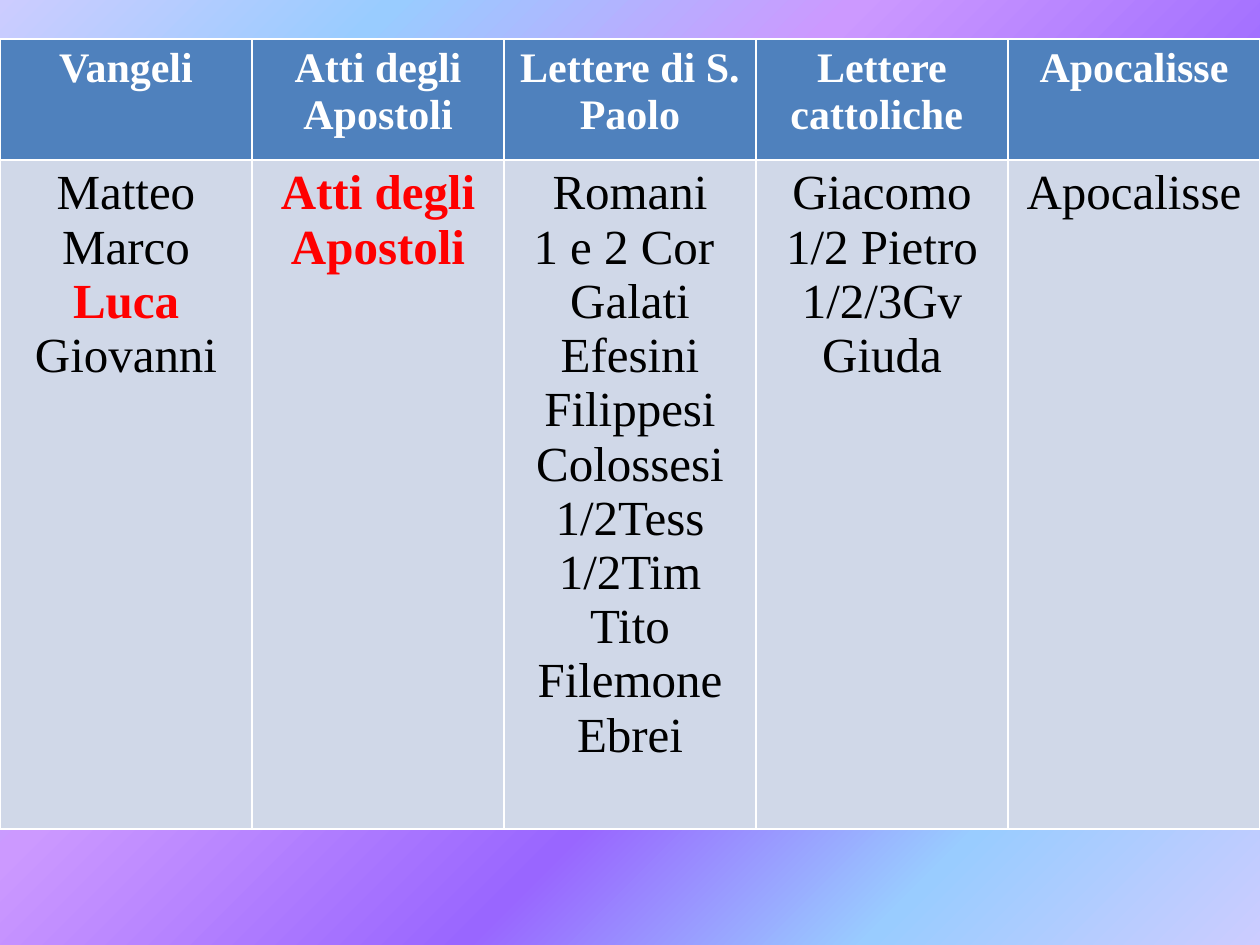
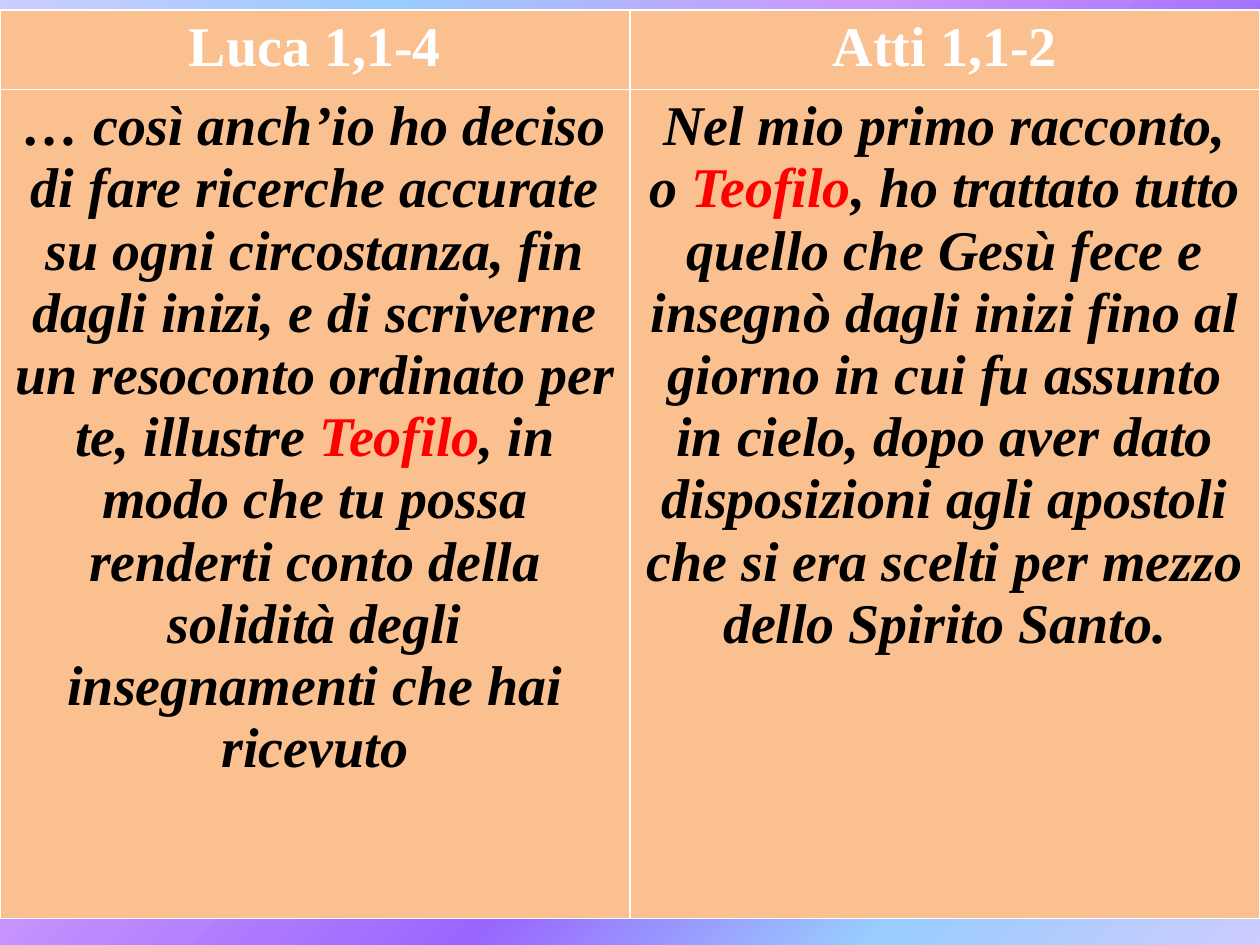
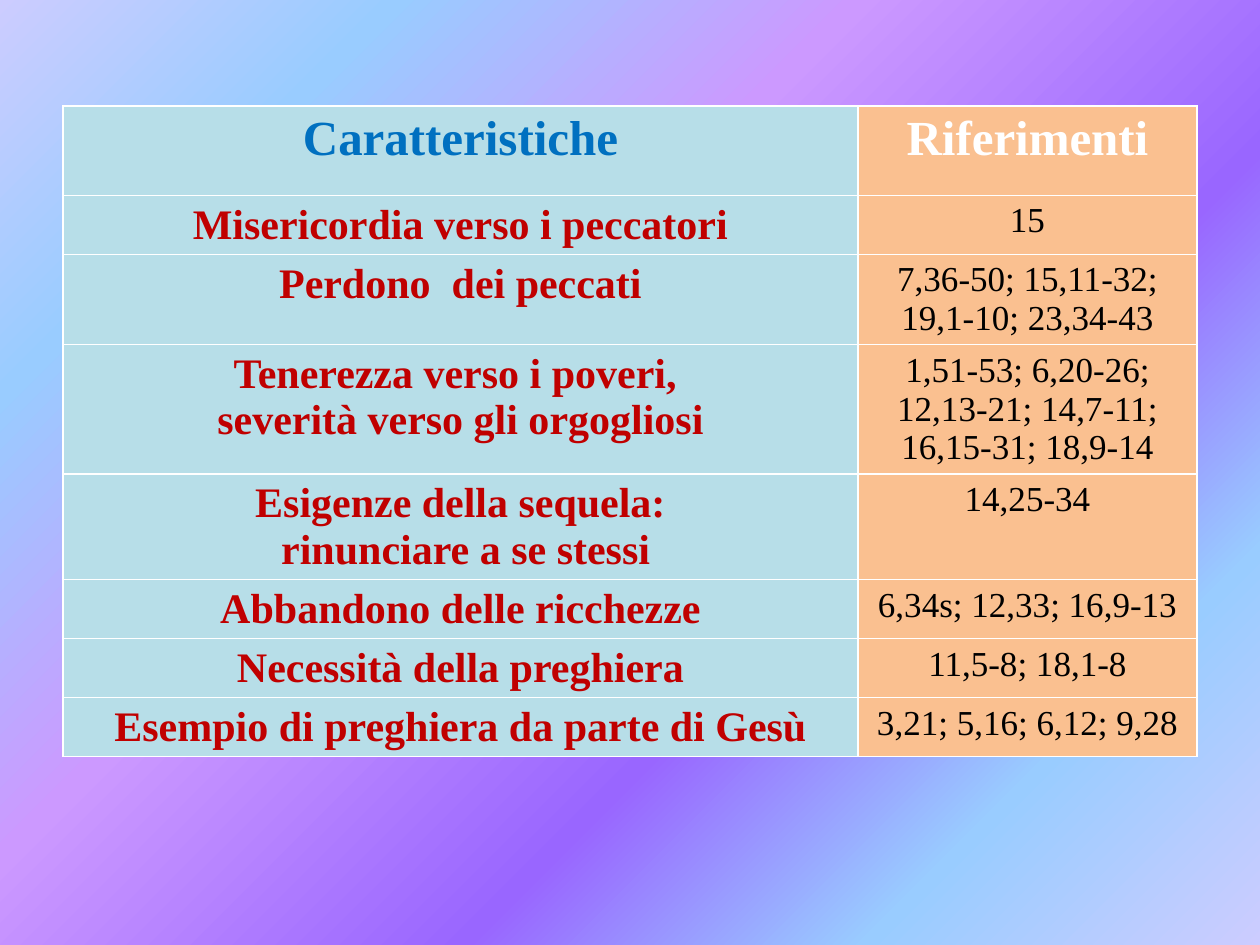
"""Build three slides of tables on the New Testament and the Gospel of Luke."""

from dataclasses import dataclass

from lxml.etree import SubElement
from pptx import Presentation
from pptx.dml.color import RGBColor
from pptx.enum.text import PP_ALIGN
from pptx.oxml.ns import qn
from pptx.util import Inches, Pt

FONT = "Times New Roman"
WHITE = RGBColor(0xFF, 0xFF, 0xFF)
BLACK = RGBColor(0x00, 0x00, 0x00)
RED = RGBColor(0xFF, 0x00, 0x00)
DARK_RED = RGBColor(0xC0, 0x00, 0x00)
BLUE = RGBColor(0x00, 0x70, 0xC0)
STEEL = RGBColor(0x4F, 0x81, 0xBD)
PALE_BLUE = RGBColor(0xD0, 0xD8, 0xE8)
AQUA = RGBColor(0xB7, 0xDE, 0xE8)
PEACH = RGBColor(0xFA, 0xC0, 0x90)
LAVENDER = RGBColor(0xCC, 0xCC, 0xFF)
SKY = RGBColor(0x99, 0xCC, 0xFF)
VIOLET = RGBColor(0x99, 0x66, 0xFF)
ORCHID = RGBColor(0xCC, 0x99, 0xFF)
BACKGROUND_STOPS = [(0, LAVENDER), (18, SKY), (36, VIOLET),
                    (61, ORCHID), (82, SKY), (100, LAVENDER)]
HIGHLIGHT_MARK = "*"


@dataclass(frozen=True)
class CellStyle:
    size: int
    color: RGBColor
    fill: RGBColor
    bold: bool = True
    italic: bool = False


@dataclass(frozen=True)
class Column:
    width: float
    header: CellStyle
    body: CellStyle


@dataclass(frozen=True)
class TablePage:
    left: float
    top: float
    columns: list[Column]
    heights: list[float]
    rows: list[list[str]]


BOOK = Column(2, CellStyle(24, WHITE, STEEL), CellStyle(28, BLACK, PALE_BLUE, bold=False))
PASSAGE = Column(5, CellStyle(32, WHITE, PEACH), CellStyle(32, BLACK, PEACH, italic=True))
FEATURE = Column(6.31, CellStyle(28, BLUE, AQUA), CellStyle(24, DARK_RED, AQUA))
REFERENCE = Column(2.69, CellStyle(28, WHITE, PEACH), CellStyle(20, BLACK, PEACH, bold=False))

PAGES = [
    TablePage(0, 0.31, [BOOK] * 5, [0.96, 5.31], [
        ["Vangeli", "Atti degli Apostoli", "Lettere di S. Paolo",
         "Lettere cattoliche ", "Apocalisse"],
        ["Matteo\nMarco\n*Luca*\nGiovanni",
         "*Atti degli Apostoli*",
         "Romani\n1 e 2 Cor \nGalati\nEfesini\nFilippesi\nColossesi\n"
         "1/2Tess\n1/2Tim\nTito\nFilemone\nEbrei",
         "Giacomo\n1/2 Pietro\n1/2/3Gv\nGiuda",
         "Apocalisse"],
    ]),
    TablePage(0, 0.08, [PASSAGE] * 2, [0.63, 6.58], [
        ["Luca 1,1-4", "Atti 1,1-2"],
        ["… così anch’io ho deciso di fare ricerche accurate su ogni circostanza, "
         "fin dagli inizi, e di scriverne un resoconto ordinato per te, illustre "
         "*Teofilo*, in modo che tu possa renderti conto della solidità degli "
         "insegnamenti che hai ricevuto",
         "Nel mio primo racconto, o *Teofilo*, ho trattato tutto quello che Gesù "
         "fece e insegnò dagli inizi fino al giorno in cui fu assunto in cielo, "
         "dopo aver dato disposizioni agli apostoli che si era scelti per mezzo "
         "dello Spirito Santo."],
    ]),
    TablePage(0.5, 0.84, [FEATURE, REFERENCE], [0.71] + [0.41] * 7, [
        ["Caratteristiche", "Riferimenti"],
        ["Misericordia verso i peccatori", "15"],
        ["Perdono  dei peccati", "7,36-50; 15,11-32; 19,1-10; 23,34-43"],
        ["Tenerezza verso i poveri, \nseverità verso gli orgogliosi",
         "1,51-53; 6,20-26; 12,13-21; 14,7-11; 16,15-31; 18,9-14"],
        ["Esigenze della sequela:\n rinunciare a se stessi", "14,25-34"],
        ["Abbandono delle ricchezze", "6,34s; 12,33; 16,9-13"],
        ["Necessità della preghiera", "11,5-8; 18,1-8"],
        ["Esempio di preghiera da parte di Gesù", "3,21; 5,16; 6,12; 9,28"],
    ]),
]


def set_background(master) -> None:
    """Give the master a gradient that spreads from the bottom right corner."""
    master.background.fill.gradient()
    gradient = next(master.element.iter(qn("a:gradFill")))
    for child in list(gradient):
        gradient.remove(child)
    stops = SubElement(gradient, qn("a:gsLst"))
    for percent, color in BACKGROUND_STOPS:
        stop = SubElement(stops, qn("a:gs"), pos=str(percent * 1000))
        SubElement(stop, qn("a:srgbClr"), val=str(color))
    shade = SubElement(gradient, qn("a:path"), path="circle")
    SubElement(shade, qn("a:fillToRect"), l="100000", t="100000")


def fill_cell(cell, text: str, style: CellStyle) -> None:
    """Write centred paragraphs, with marked words in bold red."""
    cell.fill.solid()
    cell.fill.fore_color.rgb = style.fill
    frame = cell.text_frame
    for number, line in enumerate(text.split("\n")):
        para = frame.add_paragraph() if number else frame.paragraphs[0]
        para.alignment = PP_ALIGN.CENTER
        para.font.name = FONT
        para.font.size = Pt(style.size)
        para.font.bold = style.bold
        para.font.italic = style.italic
        para.font.color.rgb = style.color
        for position, words in enumerate(line.split(HIGHLIGHT_MARK)):
            if not words:
                continue
            span = para.add_run()
            span.text = words
            if position % 2:
                span.font.bold = True
                span.font.color.rgb = RED


def add_table_page(deck, content: TablePage) -> None:
    """Add a slide that holds one table."""
    page = deck.slides.add_slide(deck.slide_layouts[6])
    table = page.shapes.add_table(
        len(content.rows), len(content.columns),
        Inches(content.left), Inches(content.top),
        Inches(sum(column.width for column in content.columns)),
        Inches(sum(content.heights))).table
    table.horz_banding = False
    for table_column, column in zip(table.columns, content.columns):
        table_column.width = Inches(column.width)
    for row_number, (height, texts) in enumerate(zip(content.heights, content.rows)):
        table.rows[row_number].height = Inches(height)
        for column_number, (column, text) in enumerate(zip(content.columns, texts)):
            style = column.body if row_number else column.header
            fill_cell(table.cell(row_number, column_number), text, style)


def main() -> None:
    """Build and save the deck."""
    deck = Presentation()
    deck.slide_width = Inches(10)
    deck.slide_height = Inches(7.5)
    set_background(deck.slide_master)
    for content in PAGES:
        add_table_page(deck, content)
    deck.save("out.pptx")


if __name__ == "__main__":
    main()
